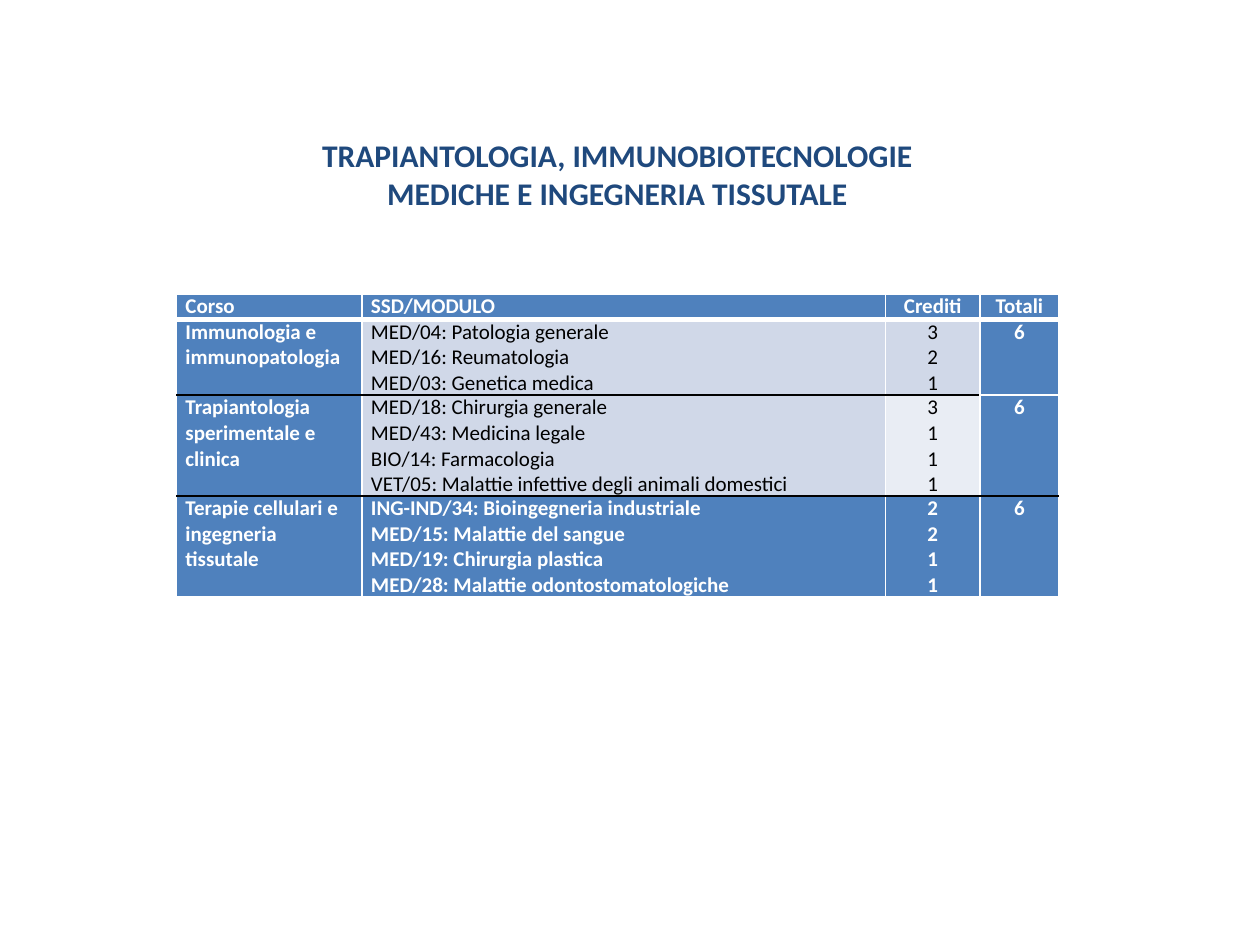
import pptx
import pptx.util
import pptx.dml.color
import pptx.enum.text
import pptx.oxml.ns
import lxml.etree

Pt = pptx.util.Pt
RGB = pptx.dml.color.RGBColor
ALIGN = pptx.enum.text.PP_ALIGN
qn = pptx.oxml.ns.qn

WHITE, BLACK = RGB(255, 255, 255), RGB(0, 0, 0)
NAVY, BLUE = RGB(0x1F, 0x49, 0x7D), RGB(0x4F, 0x81, 0xBD)
PALE, MIST = RGB(0xD0, 0xD8, 0xE8), RGB(0xE9, 0xED, 0xF4)
FONT = "Calibri"

TITLE = "TRAPIANTOLOGIA, IMMUNOBIOTECNOLOGIE MEDICHE E INGEGNERIA TISSUTALE"

# Each row: its four cells as lists of paragraphs, then the four fills.
ROWS = [
    ([["Corso"], ["SSD/MODULO"], ["Crediti"], ["Totali"]], [BLUE] * 4),
    ([["Immunologia e immunopatologia"],
      ["MED/04: Patologia generale", "MED/16: Reumatologia",
       "MED/03: Genetica medica"],
      ["3", "2", "1"], ["6"]],
     [BLUE, PALE, PALE, BLUE]),
    ([["Trapiantologia sperimentale e clinica"],
      ["MED/18: Chirurgia generale", "MED/43: Medicina legale",
       "BIO/14: Farmacologia",
       "VET/05: Malattie infettive degli animali domestici"],
      ["3", "1", "1", "1"], ["6"]],
     [BLUE, PALE, MIST, BLUE]),
    ([["Terapie cellulari e", "ingegneria tissutale"],
      ["ING-IND/34: Bioingegneria industriale", "MED/15: Malattie del sangue",
       "MED/19: Chirurgia plastica", "MED/28: Malattie odontostomatologiche"],
      ["2", "2", "1", "1"], ["6"]],
     [BLUE] * 4),
]
# Rules above, between and below the rows: colour and width.
RULES = [(WHITE, 1), (WHITE, 3), (BLACK, 1), (BLACK, 1), (WHITE, 1)]
WIDTHS = [106, 299, 54, 45]
LEFT, TOP, LINE = 101, 168, 14.4


def write(frame, texts, size, color, bold, align):
    for i, text in enumerate(texts):
        para = frame.add_paragraph() if i else frame.paragraphs[0]
        para.alignment = align
        run = para.add_run()
        run.text = text
        font = run.font
        font.name, font.size, font.bold = FONT, Pt(size), bold
        font.color.rgb = color


def rule(row, col):
    """Colour and width of the rule above a row; the first total ends in white."""
    return (WHITE, 1) if (row, col) == (2, 3) else RULES[row]


def border(cell, sides):
    props = cell._tc.get_or_add_tcPr()
    for i, (tag, (color, width)) in enumerate(sides):
        line = lxml.etree.Element(qn("a:" + tag), w=str(Pt(width)))
        fill = lxml.etree.SubElement(line, qn("a:solidFill"))
        lxml.etree.SubElement(fill, qn("a:srgbClr"), val=str(color))
        props.insert(i, line)


def add_title(slide):
    title = slide.shapes.title
    title.left, title.top = Pt(172.8), Pt(74)
    title.width, title.height = Pt(360), Pt(51)
    frame = title.text_frame
    frame.word_wrap = True
    frame.auto_size = pptx.enum.text.MSO_AUTO_SIZE.SHAPE_TO_FIT_TEXT
    frame.vertical_anchor = pptx.enum.text.MSO_ANCHOR.TOP
    write(frame, [TITLE], 18, NAVY, True, ALIGN.CENTER)


def add_courses(slide):
    lines = [max(map(len, cells)) for cells, _ in ROWS]
    table = slide.shapes.add_table(
        len(ROWS), len(WIDTHS), Pt(LEFT), Pt(TOP),
        Pt(sum(WIDTHS)), Pt(LINE * sum(lines))).table
    table.first_row = table.horz_banding = False
    for col, width in zip(table.columns, WIDTHS):
        col.width = Pt(width)
    for r, (cells, fills) in enumerate(ROWS):
        table.rows[r].height = Pt(LINE * lines[r])
        for c, (texts, fill) in enumerate(zip(cells, fills)):
            cell = table.cell(r, c)
            cell.margin_left = cell.margin_right = Pt(5)
            cell.margin_top = cell.margin_bottom = 0
            cell.fill.solid()
            cell.fill.fore_color.rgb = fill
            dark = fill == BLUE
            write(cell.text_frame, texts, 12, WHITE if dark else BLACK, dark,
                  ALIGN.CENTER if c > 1 else ALIGN.LEFT)
            border(cell, [("lnL", (WHITE, 1)), ("lnR", (WHITE, 1)),
                          ("lnT", rule(r, c)), ("lnB", rule(r + 1, c))])


def main():
    deck = pptx.Presentation()
    deck.slide_width, deck.slide_height = Pt(720), Pt(540)
    slide = deck.slides.add_slide(deck.slide_layouts[5])
    add_courses(slide)
    add_title(slide)
    deck.save("out.pptx")


if __name__ == "__main__":
    main()
